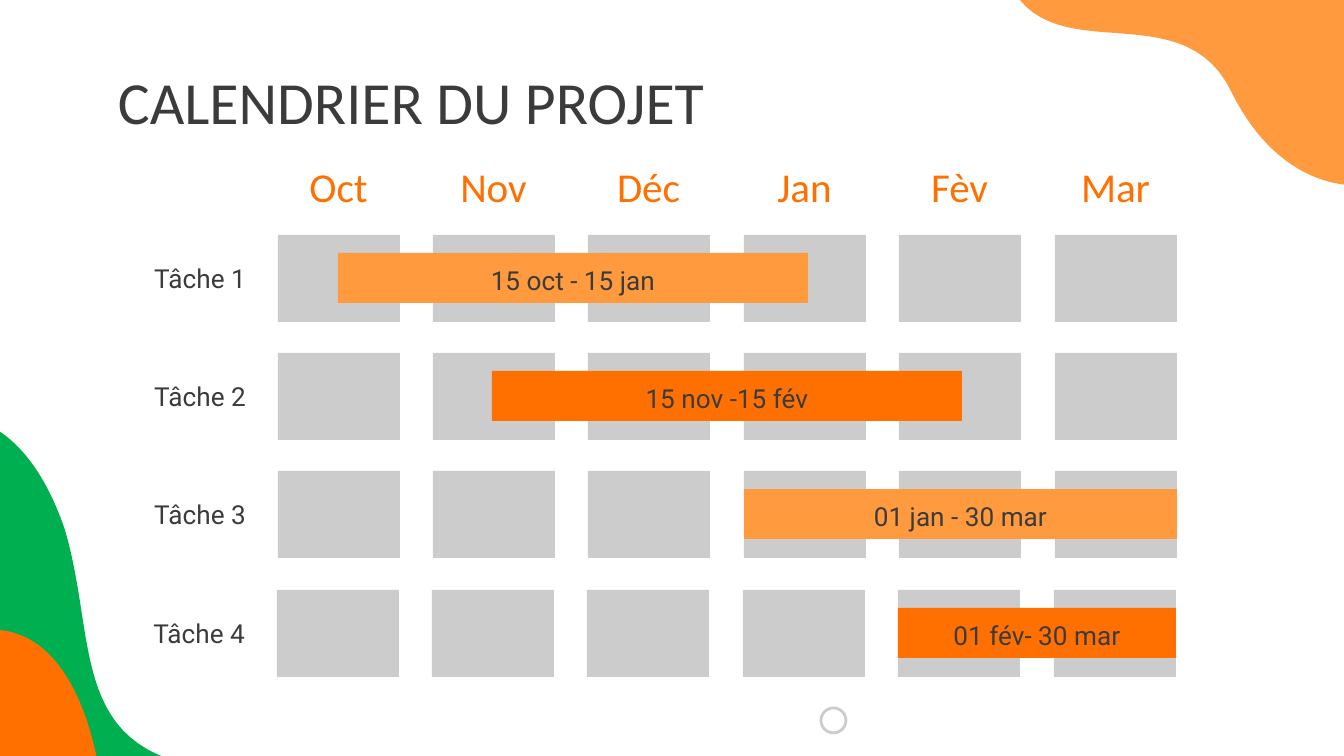
from pptx import Presentation
from pptx.dml.color import RGBColor
from pptx.enum.shapes import MSO_SHAPE
from pptx.enum.text import MSO_ANCHOR, PP_ALIGN
from pptx.util import Pt

RECTANGLE, OVAL = MSO_SHAPE.RECTANGLE, MSO_SHAPE.OVAL
TOP, MIDDLE = MSO_ANCHOR.TOP, MSO_ANCHOR.MIDDLE
LEFT, CENTER, RIGHT = PP_ALIGN.LEFT, PP_ALIGN.CENTER, PP_ALIGN.RIGHT
PX = 914400 / 134.4  # EMU per px
ORANGE, LIGHT_ORANGE, GREEN = "FF7000", "FF9A3F", "00B050"
GRAY, DARK, WHITE = "CCCCCC", "3B3B3B", "FFFFFF"
CURVE_STEPS = 24

color = RGBColor.from_string


def write(shape, text, size, font, hex_color, align, anchor, margin=0):
    frame = shape.text_frame
    frame.word_wrap = True
    frame.vertical_anchor = anchor
    frame.margin_left = frame.margin_right = round(margin * PX)
    frame.margin_top = frame.margin_bottom = round(margin * PX)
    paragraph = frame.paragraphs[0]
    paragraph.text = text
    paragraph.alignment = align
    paragraph.font.size = Pt(size)
    paragraph.font.name = font
    paragraph.font.color.rgb = color(hex_color)
    return paragraph


def place(*lengths):
    return [round(length * PX) for length in lengths]


deck = Presentation()
deck.slide_width, deck.slide_height = place(1344, 756)
page = deck.slides.add_slide(deck.slide_layouts[5])
shapes = page.shapes
page.background.fill.solid()
page.background.fill.fore_color.rgb = color(WHITE)

# Corner blobs: a start point, then lines (1 point) and cubic curves (3 points)
blobs = [
    (LIGHT_ORANGE, (1347, -3), [
        [(1348, 185)],
        [(1321, 183), (1269, 167), (1232, 93)],
        [(1187, -3), (1070, 63), (1019, -1)]]),
    (GREEN, (-1, 759), [
        [(169, 759)],
        [(74, 726), (94, 628), (65, 530)],
        [(47, 477), (23, 447), (-1, 431)]]),
    (ORANGE, (97, 759), [
        [(89, 719), (65, 636), (-1, 630)],
        [(-1, 759)]]),
]
for fill, start, segments in blobs:
    builder = shapes.build_freeform(*place(*start), scale=1.0)
    current = start
    for segment in segments:
        points = segment
        if len(segment) == 3:
            points = []
            for step in range(1, CURVE_STEPS + 1):
                t = step / CURVE_STEPS
                weights = ((1 - t) ** 3, 3 * t * (1 - t) ** 2, 3 * t * t * (1 - t), t ** 3)
                corners = [current, *segment]
                points.append([sum(w * corner[axis] for w, corner in zip(weights, corners))
                               for axis in (0, 1)])
        builder.add_line_segments([place(*point) for point in points], close=False)
        current = segment[-1]
    builder.add_line_segments([place(*start)], close=True)
    blob = builder.convert_to_shape()
    blob.shadow.inherit = False
    blob.fill.solid()
    blob.fill.fore_color.rgb = color(fill)
    blob.line.fill.background()

# Small ring at the bottom
ring = shapes.add_shape(OVAL, *place(821, 708, 25, 25))
ring.shadow.inherit = False
ring.fill.background()
ring.line.color.rgb = color(GRAY)
ring.line.width = Pt(1.5)

# Title
title = shapes.title
title.left, title.top, title.width, title.height = place(105, 66, 1133, 70)
write(title, "CALENDRIER DU PROJET", 32, "Calibri", DARK, LEFT, MIDDLE, margin=13)

# Month headings
months = ["Oct", "Nov", "Déc", "Jan", "Fèv", "Mar"]
column_lefts = [278 + column * 777 // 5 for column in range(len(months))]
for month, left in zip(months, column_lefts):
    box = shapes.add_textbox(*place(left - 8, 161, 137, 50))
    write(box, month, 22, "Calibri", ORANGE, CENTER, TOP)

# Task rows: label, month cells, then the bar (left, width) over them
tasks = [
    ("Tâche 1", "15 oct - 15 jan", 338, 470, LIGHT_ORANGE),
    ("Tâche 2", "15 nov -15 fév", 492, 470, ORANGE),
    ("Tâche 3", "01 jan - 30 mar", 744, 433, LIGHT_ORANGE),
    ("Tâche 4", "01 fév- 30 mar", 898, 278, ORANGE),
]
for row, (task, dates, bar_left, bar_width, bar_fill) in enumerate(tasks):
    top = 235 + row * 355 // 3
    shift = 1 if row == 3 else 0  # the last row sits slightly to the left
    label = shapes.add_textbox(*place(124 - shift, top + 24, 122, 38))
    write(label, task, 14, "Roboto", DARK, RIGHT, MIDDLE)

    blocks = [(left - shift, top, 122, 87, GRAY) for left in column_lefts]
    blocks.append((bar_left, top + 18, bar_width, 50, bar_fill))
    for *bounds, fill in blocks:
        block = shapes.add_shape(RECTANGLE, *place(*bounds))
        block.shadow.inherit = False
        block.fill.solid()
        block.fill.fore_color.rgb = color(fill)
        block.line.fill.background()
    # The bar is the last block of the row
    paragraph = write(block, dates, 14, "Roboto", DARK, CENTER, MIDDLE)
    paragraph.line_spacing = 1.15

deck.save("out.pptx")
